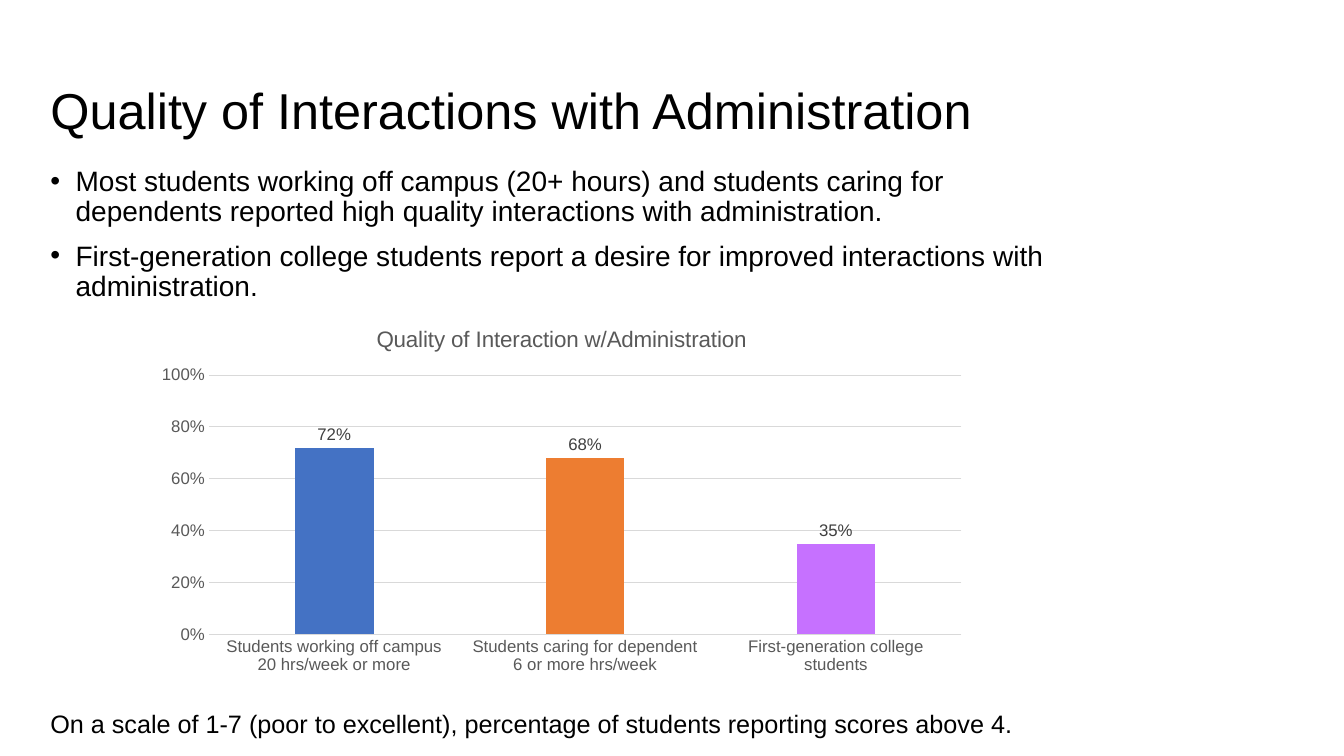
from lxml.etree import SubElement
from pptx import Presentation
from pptx.chart.data import CategoryChartData
from pptx.dml.color import RGBColor
from pptx.enum.chart import XL_CHART_TYPE, XL_LABEL_POSITION, XL_TICK_MARK
from pptx.enum.text import MSO_ANCHOR, MSO_AUTO_SIZE, PP_ALIGN
from pptx.oxml.ns import qn
from pptx.util import Pt

PX = 9144  # EMU per px, 100 px to the inch
COLORS = {
    "text": "000000", "axis": "595959", "label": "404040", "grid": "D9D9D9",
    "working": "4472C4", "caring": "ED7D31", "first_gen": "C671FF",
}
SCORES = [
    ("Students working off campus 20 hrs/week or more", 0.72, "working"),
    ("Students caring for dependent 6 or more hrs/week", 0.68, "caring"),
    ("First-generation college students", 0.35, "first_gen"),
]
FINDINGS = [
    "Most students working off campus (20+ hours) and students caring for "
    "dependents reported high quality interactions with administration.",
    "First-generation college students report a desire for improved "
    "interactions with administration.",
]


def apply(target, **values):
    for name, value in values.items():
        setattr(target, name, value)


def rgb(name):
    return RGBColor.from_string(COLORS[name])


class SlideBuilder:
    def __init__(self, slide, font_name):
        self.slide = slide
        self.font_name = font_name

    def style(self, font, size, color="text"):
        apply(font, name=self.font_name, size=Pt(size), bold=False)
        font.color.rgb = rgb(color)

    def place(self, shape, left, top, width, height):
        apply(shape, left=left * PX, top=top * PX, width=width * PX, height=height * PX)

    def add_words(self, paragraph, text, size, color="text", **formats):
        apply(paragraph, **formats)
        run = paragraph.add_run()
        run.text = text
        self.style(run.font, size, color)

    def title(self, text, *box):
        heading = self.slide.shapes.title
        self.place(heading, *box)
        frame = heading.text_frame
        apply(frame, vertical_anchor=MSO_ANCHOR.MIDDLE, auto_size=MSO_AUTO_SIZE.NONE)
        self.add_words(frame.paragraphs[0], text, 36, alignment=PP_ALIGN.LEFT,
                       line_spacing=0.9)

    def bullets(self, items, *box):
        body = self.slide.placeholders[1]
        self.place(body, *box)
        frame = body.text_frame
        frame.auto_size = MSO_AUTO_SIZE.NONE
        for index, item in enumerate(items):
            paragraph = frame.add_paragraph() if index else frame.paragraphs[0]
            properties = paragraph._p.get_or_add_pPr()
            properties.set("marL", str(25 * PX))
            properties.set("indent", str(-25 * PX))
            SubElement(properties, qn("a:buChar"), char="•")
            self.add_words(paragraph, item, 20, line_spacing=0.9,
                           space_before=Pt(10 if index else 0))

    def note(self, text, *box):
        caption = self.slide.shapes.add_textbox(*(length * PX for length in box))
        frame = caption.text_frame
        apply(frame, word_wrap=True, auto_size=MSO_AUTO_SIZE.SHAPE_TO_FIT_TEXT)
        self.add_words(frame.paragraphs[0], text, 18)

    def column_chart(self, heading, scores, *box):
        data = CategoryChartData(number_format="0%")
        data.categories = [group for group, _, _ in scores]
        data.add_series("Series 1", [share for _, share, _ in scores])
        chart = self.slide.shapes.add_chart(
            XL_CHART_TYPE.COLUMN_CLUSTERED, *(length * PX for length in box), data).chart
        self.style(chart.font, 12)
        apply(chart, has_legend=False, has_title=True)
        self.add_words(chart.chart_title.text_frame.paragraphs[0], heading, 16, "axis")
        chart.chart_title.include_in_layout = False

        for axis in (chart.category_axis, chart.value_axis):
            apply(axis, major_tick_mark=XL_TICK_MARK.NONE, minor_tick_mark=XL_TICK_MARK.NONE)
            self.style(axis.tick_labels.font, 12, "axis")
        shares = chart.value_axis
        apply(shares, minimum_scale=0, maximum_scale=1, major_unit=0.2,
              has_major_gridlines=True)
        apply(shares.tick_labels, number_format="0%", number_format_is_linked=False)
        shares.format.line.fill.background()
        for line in (chart.category_axis.format.line, shares.major_gridlines.format.line):
            line.color.rgb = rgb("grid")
            line.width = Pt(0.75)

        plot = chart.plots[0]
        apply(plot, gap_width=219, overlap=-27, vary_by_categories=False, has_data_labels=True)
        apply(plot.data_labels, show_value=True, position=XL_LABEL_POSITION.OUTSIDE_END,
              number_format="0%", number_format_is_linked=False)
        self.style(plot.data_labels.font, 12, "label")
        for index, (_, _, color) in enumerate(scores):
            fill = plot.series[0].points[index].format.fill
            fill.solid()
            fill.fore_color.rgb = rgb(color)


def main():
    deck = Presentation()
    apply(deck, slide_width=1333 * PX, slide_height=750 * PX)
    builder = SlideBuilder(deck.slides.add_slide(deck.slide_layouts[1]), "Arial")
    builder.title("Quality of Interactions with Administration", 40, 40, 1055, 145)
    builder.bullets(FINDINGS, 40, 161, 1055, 515)
    builder.note("On a scale of 1-7 (poor to excellent), percentage of students "
                 "reporting scores above 4.", 40, 698, 1111, 40)
    builder.column_chart("Quality of Interaction w/Administration", SCORES, 144, 306, 826, 370)
    deck.save("out.pptx")


if __name__ == "__main__":
    main()
